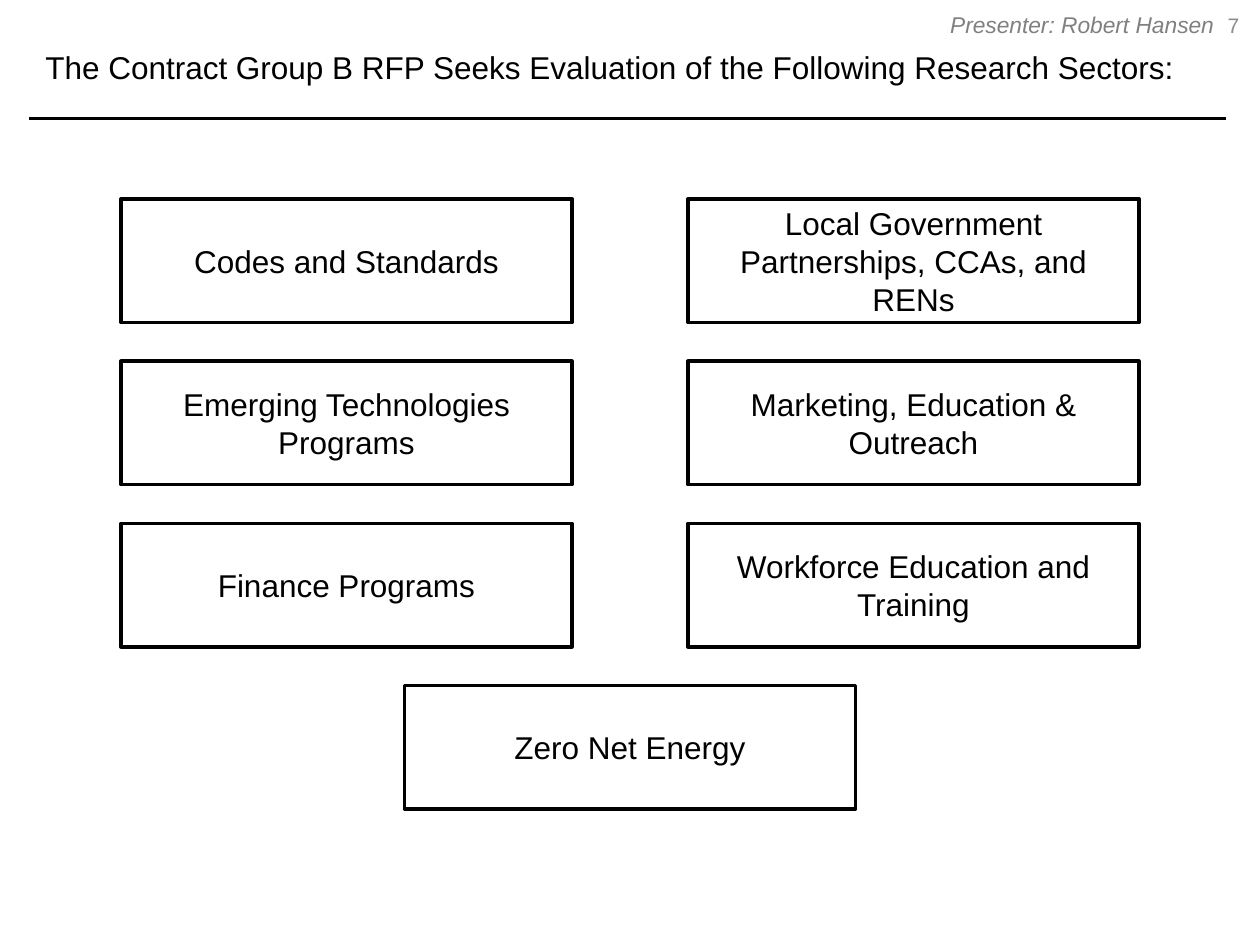
from pptx import Presentation
from pptx.dml.color import RGBColor
from pptx.enum.shapes import MSO_CONNECTOR as CONNECTOR, MSO_SHAPE as SHAPE
from pptx.enum.text import MSO_ANCHOR as ANCHOR, PP_ALIGN as ALIGN
from pptx.oxml.ns import qn
from pptx.util import Inches, Pt
from lxml.etree import SubElement

BLACK = RGBColor(0x00, 0x00, 0x00)
PRESENTER_GRAY = RGBColor(0x80, 0x80, 0x80)
NUMBER_GRAY = RGBColor(0x8C, 0x8C, 0x8C)

SECTOR_WIDTH, SECTOR_HEIGHT = 3.58, 0.98
LEFT_COLUMN, COLUMN_STEP = 0.96, 4.5
FIRST_ROW, ROW_STEP = 1.58, 1.287

SECTOR_ROWS = [
    ["Codes and Standards", "Local Government Partnerships, CCAs, and RENs"],
    ["Emerging Technologies Programs", "Marketing, Education & Outreach"],
    ["Finance Programs", "Workforce Education and Training"],
    ["Zero Net Energy"],
]


def write_text(holder, text, size=18, color=BLACK, align=ALIGN.CENTER,
               italic=False, inset=0.05):
    """Put one formatted, vertically centred paragraph in a holder."""
    frame = holder.text_frame
    frame.word_wrap = True
    frame.vertical_anchor = ANCHOR.MIDDLE
    frame.margin_left = frame.margin_right = Inches(0.1)
    frame.margin_top = frame.margin_bottom = Inches(inset)
    paragraph = frame.paragraphs[0]
    paragraph.alignment = align
    run = paragraph.add_run()
    run.text = text
    run.font.name = "Arial"
    run.font.size = Pt(size)
    run.font.italic = italic
    run.font.color.rgb = color


def add_title(slide, text):
    """Move and fill the title placeholder."""
    title = slide.shapes.title
    title.left, title.top = Inches(0.26), Inches(0.06)
    title.width, title.height = Inches(9.45), Inches(0.94)
    write_text(title, text, align=ALIGN.LEFT)


def add_rule(slide):
    """Draw the line below the title."""
    rule = slide.shapes.add_connector(
        CONNECTOR.STRAIGHT, Inches(0.23), Inches(0.94), Inches(9.73), Inches(0.94))
    rule.line.color.rgb = BLACK
    rule.line.width = Pt(2)
    SubElement(rule.line._get_or_add_ln().getparent(), qn("a:effectLst"))


def add_label(slide, text, left, top, width, height, **text_format):
    """Add a text box for a header label."""
    label = slide.shapes.add_textbox(
        Inches(left), Inches(top), Inches(width), Inches(height))
    write_text(label, text, **text_format)


def add_sector(slide, text, left, top):
    """Add an outlined box naming a research sector."""
    sector = slide.shapes.add_shape(
        SHAPE.RECTANGLE, Inches(left), Inches(top),
        Inches(SECTOR_WIDTH), Inches(SECTOR_HEIGHT))
    sector.shadow.inherit = False
    sector.fill.background()
    sector.line.color.rgb = BLACK
    sector.line.width = Pt(2)
    write_text(sector, text)


def add_sectors(slide):
    """Lay out the sectors in two columns, centring a single one."""
    for row, sectors in enumerate(SECTOR_ROWS):
        row_left = LEFT_COLUMN + (2 - len(sectors)) * COLUMN_STEP / 2
        for column, sector in enumerate(sectors):
            add_sector(slide, sector, row_left + column * COLUMN_STEP,
                       FIRST_ROW + row * ROW_STEP)


def main():
    """Build and save the research sectors slide."""
    deck = Presentation()
    deck.slide_width, deck.slide_height = Inches(10), Inches(7.5)
    slide = deck.slides.add_slide(deck.slide_layouts[5])
    add_rule(slide)
    add_title(slide, "The Contract Group B RFP Seeks Evaluation of the "
                     "Following Research Sectors:")
    add_label(slide, "7", 9.58, 0, 0.42, 0.4, size=12, color=NUMBER_GRAY)
    add_label(slide, "Presenter: Robert Hansen", 7.29, 0.07, 2.44, 0.24, size=13,
              color=PRESENTER_GRAY, align=ALIGN.RIGHT, italic=True, inset=0)
    add_sectors(slide)
    deck.save("out.pptx")


if __name__ == "__main__":
    main()
